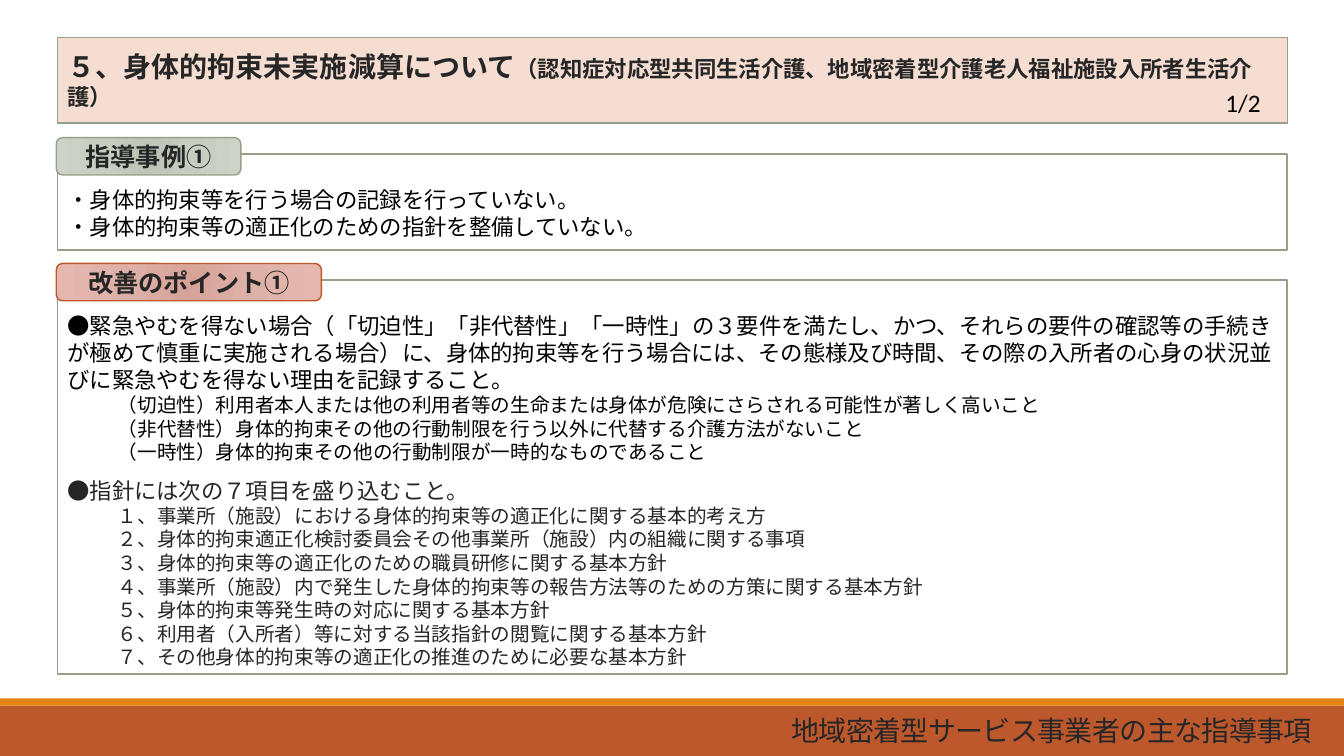
from dataclasses import dataclass

from lxml import etree
from pptx import Presentation
from pptx.dml.color import RGBColor
from pptx.enum.lang import MSO_LANGUAGE_ID
from pptx.enum.shapes import MSO_SHAPE
from pptx.enum.text import MSO_ANCHOR, MSO_AUTO_SIZE, PP_ALIGN
from pptx.oxml import parse_xml
from pptx.oxml.ns import nsdecls, qn
from pptx.util import Cm, Pt

RECT, ROUNDED = MSO_SHAPE.RECTANGLE, MSO_SHAPE.ROUNDED_RECTANGLE
TOP, MIDDLE = MSO_ANCHOR.TOP, MSO_ANCHOR.MIDDLE
LEFT, CENTER, RIGHT = PP_ALIGN.LEFT, PP_ALIGN.CENTER, PP_ALIGN.RIGHT
NO_AUTOFIT = MSO_AUTO_SIZE.NONE
JAPANESE = MSO_LANGUAGE_ID.JAPANESE


@dataclass(frozen=True)
class Theme:
    font: str = "Noto Sans CJK JP"
    number_font: str = "Calibri"
    black: str = "000000"
    ink: str = "262626"
    white: str = "FFFFFF"
    peach: str = "F5DDD2"
    sage: str = "94A088"
    rust: str = "BD582C"
    orange: str = "E48312"
    sage_fade: tuple = ("BBC3B5", "C7CDC1", "CDD4C7")
    rust_fade: tuple = ("D7A197", "DEB1A8", "E6B7AE")
    heading: int = 20
    label: int = 18
    body: int = 16
    detail: int = 14


THEME = Theme()


def paint(block, fill, line=None, weight=1):
    block.fill.solid()
    block.fill.fore_color.rgb = RGBColor.from_string(fill)
    if line:
        block.line.color.rgb = RGBColor.from_string(line)
        block.line.width = Pt(weight)
    else:
        block.line.fill.background()


def write(para, text, size, color, align=LEFT, bold=False, font=THEME.font):
    span = para.add_run()
    span.text = text
    span.font.language_id = JAPANESE
    para.alignment = align
    para.font.size = Pt(size)
    para.font.bold = bold
    para.font.color.rgb = RGBColor.from_string(color)
    para.font.name = font
    return span


deck = Presentation()
deck.slide_width, deck.slide_height = Cm(33.87), Cm(19.05)
page = deck.slides.add_slide(deck.slide_layouts[5])

# Heading
title = page.shapes.title
title.left, title.top, title.width, title.height = Cm(1.45), Cm(0.94), Cm(30.99), Cm(2.16)
paint(title, THEME.peach, THEME.sage)
title.text_frame.auto_size = NO_AUTOFIT
title.text_frame.vertical_anchor = MIDDLE
heading = title.text_frame.paragraphs[0]
write(heading, "５、身体的拘束未実施減算について", THEME.heading, THEME.ink, bold=True)
scope = write(heading, "（認知症対応型共同生活介護、地域密着型介護老人福祉施設入所者生活介護）",
              THEME.heading, THEME.ink, bold=True)
scope.font.size = Pt(THEME.body)

# Footer bars
for top, height, color in [(17.78, 1.27, THEME.rust), (17.6, 0.18, THEME.orange)]:
    bar = page.shapes.add_shape(RECT, 0, Cm(top), deck.slide_width, Cm(height))
    bar.shadow.inherit = False
    paint(bar, color)

# Panel contents: text, size, colour, space before
cases = [
    ("・身体的拘束等を行う場合の記録を行っていない。", THEME.body, THEME.black, 0),
    ("・身体的拘束等の適正化のための指針を整備していない。", THEME.body, THEME.black, 0),
]
conditions = [
    "（切迫性）利用者本人または他の利用者等の生命または身体が危険にさらされる可能性が著しく高いこと",
    "（非代替性）身体的拘束その他の行動制限を行う以外に代替する介護方法がないこと",
    "（一時性）身体的拘束その他の行動制限が一時的なものであること",
]
guideline_items = [
    "１、事業所（施設）における身体的拘束等の適正化に関する基本的考え方",
    "２、身体的拘束適正化検討委員会その他事業所（施設）内の組織に関する事項",
    "３、身体的拘束等の適正化のための職員研修に関する基本方針",
    "４、事業所（施設）内で発生した身体的拘束等の報告方法等のための方策に関する基本方針",
    "５、身体的拘束等発生時の対応に関する基本方針",
    "６、利用者（入所者）等に対する当該指針の閲覧に関する基本方針",
    "７、その他身体的拘束等の適正化の推進のために必要な基本方針",
]
points = [
    ("●緊急やむを得ない場合（「切迫性」「非代替性」「一時性」の３要件を満たし、かつ、"
     "それらの要件の確認等の手続きが極めて慎重に実施される場合）に、身体的拘束等を行う場合には、"
     "その態様及び時間、その際の入所者の心身の状況並びに緊急やむを得ない理由を記録すること。",
     THEME.body, THEME.black, 0),
    *((text, THEME.detail, THEME.black, 0) for text in conditions),
    ("●指針には次の７項目を盛り込むこと。", THEME.body, THEME.ink, 9.6),
    *((text, THEME.detail, THEME.ink, 0) for text in guideline_items),
]

# Panels with their labels
panels = [
    (3.89, 2.41, cases, "指導事例①", 4.65, THEME.sage, THEME.sage_fade),
    (7.06, 9.93, points, "改善のポイント①", 6.68, THEME.rust, THEME.rust_fade),
]
for top, height, lines, label, label_width, accent, fade in panels:
    panel = page.shapes.add_shape(RECT, Cm(1.45), Cm(top), Cm(30.99), Cm(height))
    panel.shadow.inherit = False
    paint(panel, THEME.white, THEME.sage, 1.25)
    frame = panel.text_frame
    frame.vertical_anchor = TOP
    frame.margin_top = Cm(0.81)
    for number, (text, size, color, gap) in enumerate(lines):
        para = frame.add_paragraph() if number else frame.paragraphs[0]
        write(para, text, size, color)
        para.space_before = Pt(gap)
        if size == THEME.detail:
            para.level = 1
            para._p.get_or_add_pPr().set("marL", str(Cm(1.27)))

    tab = page.shapes.add_shape(ROUNDED, Cm(1.42), Cm(top - 0.42), Cm(label_width), Cm(0.94))
    tab.shadow.inherit = False
    paint(tab, fade[0], accent)
    stops = "".join(f'<a:gs pos="{place * 1000}"><a:srgbClr val="{color}"/></a:gs>'
                    for place, color in zip((0, 45, 100), fade))
    gradient = parse_xml(
        f'<a:gradFill {nsdecls("a")}><a:gsLst>{stops}</a:gsLst><a:path path="circle">'
        '<a:fillToRect l="100000" t="100000" r="100000" b="100000"/></a:path></a:gradFill>')
    solid = tab.element.spPr.find(qn("a:solidFill"))
    solid.getparent().replace(solid, gradient)
    tab.text_frame.vertical_anchor = MIDDLE
    write(tab.text_frame.paragraphs[0], label, THEME.label, THEME.ink, CENTER, bold=True)

# Footer text
footer = page.shapes.add_textbox(Cm(1.45), Cm(17.88), Cm(31.85), Cm(1.17))
footer.text_frame.word_wrap = True
footer.text_frame.vertical_anchor = MIDDLE
para = footer.text_frame.paragraphs[0]
span = write(para, "地域密着型サービス事業者の主な指導事項", THEME.heading, THEME.ink, RIGHT)
span.font._element.set("spc", "-50")
para.line_spacing = 0.85

# Page count
counter = page.shapes.add_textbox(Cm(30.63), Cm(2.08), Cm(1.8), Cm(1.02))
counter.text_frame.word_wrap = True
write(counter.text_frame.paragraphs[0], "1/2", THEME.label, THEME.black,
      font=THEME.number_font)

# East Asian typeface alongside each Latin one
for latin in list(page.element.iter(qn("a:latin"))):
    east_asian = etree.Element(qn("a:ea"), typeface=THEME.font)
    latin.addnext(east_asian)

deck.save("out.pptx")
